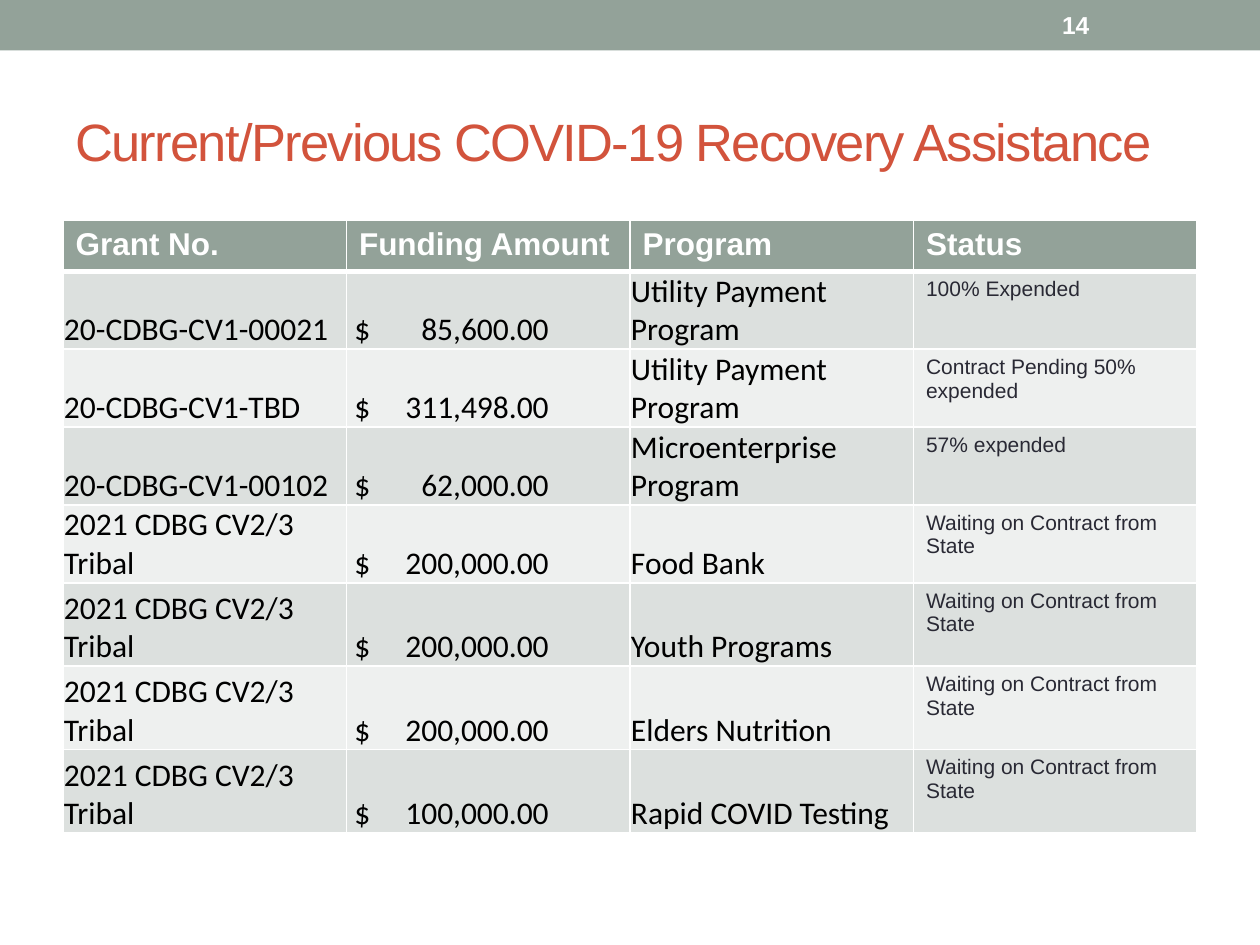
from lxml import etree
from pptx import Presentation
from pptx import util as u
from pptx.dml.color import RGBColor
from pptx.enum import shapes, text
from pptx.oxml import ns

COLORS = {"sage": "93A299", "rust": "D2533C", "white": "FFFFFF", "black": "000000",
          "ink": "292934", "band_dark": "DCE0DE", "band_light": "EEF0EF"}
HEADINGS = ["Grant No.", "Funding Amount", "Program", "Status"]
TRIBAL = "2021 CDBG CV2/3 Tribal"
WAITING = "Waiting on Contract from State"
GRANTS = [
    ("20-CDBG-CV1-00021", "85,600.00", "Utility Payment Program", "100% Expended"),
    ("20-CDBG-CV1-TBD", "311,498.00", "Utility Payment Program", "Contract Pending 50% expended"),
    ("20-CDBG-CV1-00102", "62,000.00", "Microenterprise Program", "57% expended"),
    (TRIBAL, "200,000.00", "Food Bank", WAITING),
    (TRIBAL, "200,000.00", "Youth Programs", WAITING),
    (TRIBAL, "200,000.00", "Elders Nutrition", WAITING),
    (TRIBAL, "100,000.00", "Rapid COVID Testing", WAITING),
]
ROW_HEIGHTS = [1.02] + [1.57] * 4 + [1.68] * 3
AMOUNT_COLUMN, STATUS_COLUMN = 1, 3


class SlideBuilder:
    def __init__(self, slide):
        self.slide = slide

    def color(self, name):
        return RGBColor.from_string(COLORS[name])

    def set_text(self, para, words, size, color, bold=False, font="Arial"):
        para.text = words
        para.font.name = font
        para.font.size = u.Pt(size)
        para.font.bold = bold
        para.font.color.rgb = self.color(color)

    def bar(self, left, top, width, height, color):
        bar = self.slide.shapes.add_shape(
            shapes.MSO_SHAPE.RECTANGLE, u.Cm(left), u.Cm(top), u.Cm(width), u.Cm(height))
        bar.shadow.inherit = False
        bar.fill.solid()
        bar.fill.fore_color.rgb = self.color(color)
        bar.line.fill.background()

    def label(self, left, top, width, height, words, size, color, bold=False):
        box = self.slide.shapes.add_textbox(u.Cm(left), u.Cm(top), u.Cm(width), u.Cm(height))
        frame = box.text_frame
        frame.word_wrap = True
        frame.vertical_anchor = text.MSO_ANCHOR.MIDDLE
        para = frame.paragraphs[0]
        self.set_text(para, words, size, color, bold)
        return para

    def borders(self, cell, bottom):
        """Draw white cell edges, with the bottom one `bottom` points wide."""
        properties = cell._tc.get_or_add_tcPr()
        widths = {"a:lnL": 1, "a:lnR": 1, "a:lnT": 1, "a:lnB": bottom}
        for place, (tag, width) in enumerate(widths.items()):
            line = etree.Element(ns.qn(tag), w=str(u.Pt(width)))
            fill = etree.SubElement(line, ns.qn("a:solidFill"))
            etree.SubElement(fill, ns.qn("a:srgbClr"), val=COLORS["white"])
            properties.insert(place, line)

    def right_tab(self, para, position):
        properties = para._p.get_or_add_pPr()
        stops = etree.Element(ns.qn("a:tabLst"))
        etree.SubElement(stops, ns.qn("a:tab"), pos=str(u.Cm(position)), algn="r")
        properties.insert(0, stops)

    def cell(self, cell, words, fill, size, color, bold=False, font="Arial", bottom=1):
        cell.fill.solid()
        cell.fill.fore_color.rgb = self.color(fill)
        self.set_text(cell.text_frame.paragraphs[0], words, size, color, bold, font)
        self.borders(cell, bottom)

    def tight(self, cell, left):
        cell.vertical_anchor = text.MSO_ANCHOR.BOTTOM
        cell.margin_left = u.Cm(left)
        cell.margin_right = cell.margin_top = u.Cm(0.02)
        cell.margin_bottom = 0

    def grant_table(self, left, top, width):
        table = self.slide.shapes.add_table(
            len(ROW_HEIGHTS), len(HEADINGS), u.Cm(left), u.Cm(top),
            u.Cm(width), u.Cm(sum(ROW_HEIGHTS))).table
        table.first_row = table.horz_banding = False
        for row, height in zip(table.rows, ROW_HEIGHTS):
            row.height = u.Cm(height)
        for column, heading in enumerate(HEADINGS):
            self.cell(table.cell(0, column), heading, "sage", 18, "white", True, bottom=3)
        for row, grant in enumerate(GRANTS, 1):
            fill = "band_dark" if row % 2 else "band_light"
            for column, words in enumerate(grant):
                cell = table.cell(row, column)
                if column == STATUS_COLUMN:
                    self.cell(cell, words, fill, 12, "ink")
                    continue
                is_amount = column == AMOUNT_COLUMN
                self.cell(cell, f"$\t{words}" if is_amount else words,
                          fill, 18, "black", font="Calibri")
                self.tight(cell, 0.16 if is_amount else 0.02)
                if is_amount:
                    self.right_tab(cell.text_frame.paragraphs[0], 3.92)


def main():
    deck = Presentation()
    deck.slide_width, deck.slide_height = u.Cm(25.4), u.Cm(19.05)
    page = SlideBuilder(deck.slides.add_slide(deck.slide_layouts[6]))
    page.bar(0, 0, 25.4, 1.02, "sage")
    title = page.label(1.27, 1.47, 22.86, 2.74,
                       "Current/Previous COVID-19 Recovery Assistance", 30, "rust")
    title.runs[0].font._element.set("spc", "-100")
    page.grant_table(1.27, 4.45, 22.86)
    page.label(21.16, 0.05, 2.97, 0.91, "14", 14, "white", bold=True)
    deck.save("out.pptx")


if __name__ == "__main__":
    main()
